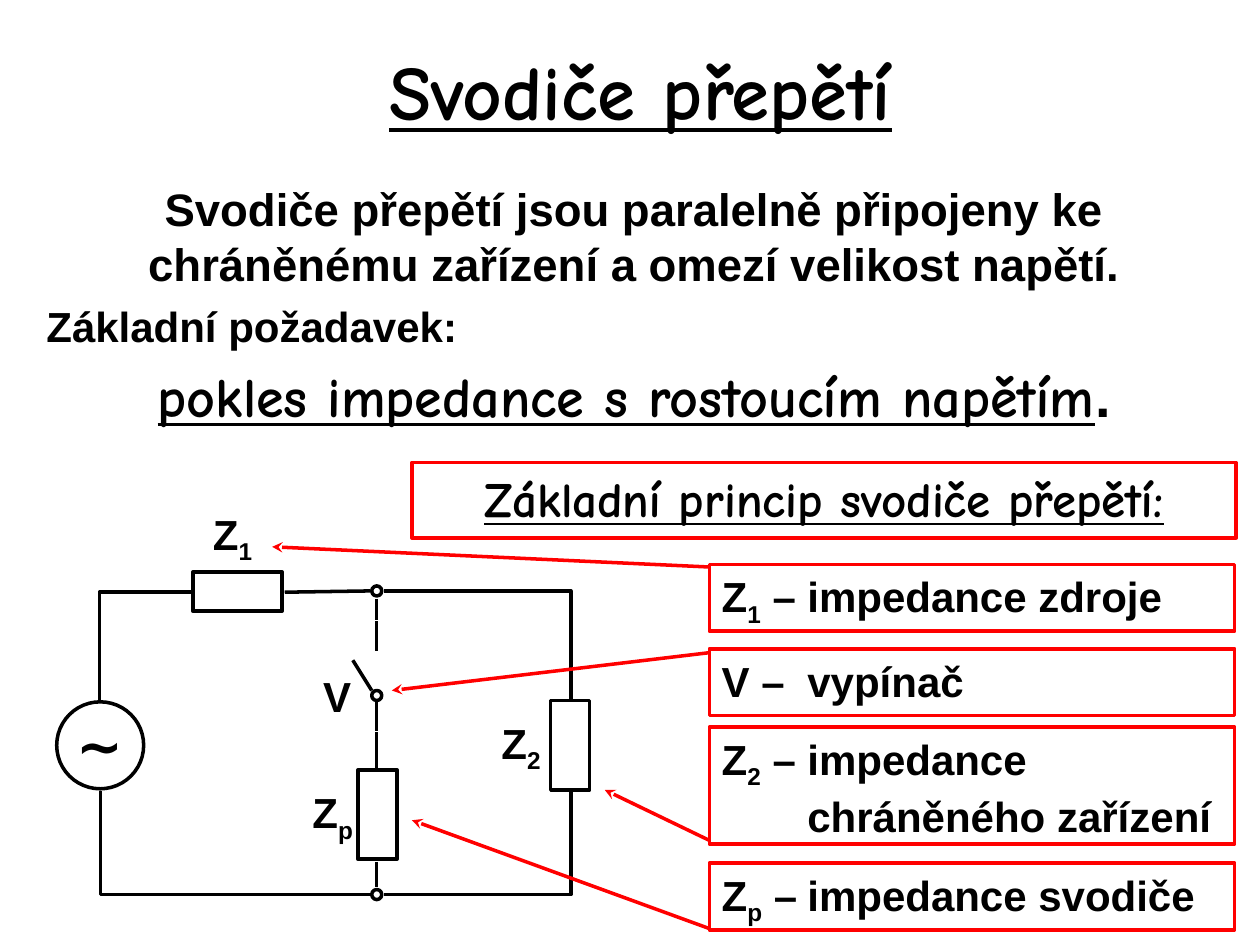
from dataclasses import dataclass

from lxml.etree import SubElement
from pptx import Presentation
from pptx.dml.color import RGBColor
from pptx.enum.shapes import MSO_CONNECTOR as Link, MSO_SHAPE as Kind
from pptx.enum.text import MSO_ANCHOR as Anchor, PP_ALIGN as Align
from pptx.oxml.ns import qn
from pptx.util import Inches, Pt

BLACK, RED = "000000", "FF0000"
COMIC = {"name": "Comic Neue", "underline": True}


@dataclass
class Run:
    text: str
    size: float = 24
    style: dict | None = None
    sub: bool = False


@dataclass
class Part:
    kind: Kind
    left: float
    top: float
    wide: float
    high: float
    turn: int = 0


@dataclass
class Tag:
    runs: list[Run]
    left: float
    top: float
    high: float = 0.4
    align: Align = Align.LEFT


@dataclass
class Note:
    runs: list[Run]
    top: float
    high: float
    start: float
    tip: tuple[float, float]


def paint(color, code: str) -> None:
    color.rgb = RGBColor.from_string(code)


def write(para, runs: list[Run], align: Align = Align.LEFT) -> None:
    para.alignment = align
    for item in runs:
        run = para.add_run()
        run.text = item.text
        look = {"name": "Arial", "size": Pt(item.size), "bold": True,
                "underline": False} | (item.style or {})
        for key, value in look.items():
            setattr(run.font, key, value)
        paint(run.font.color, BLACK)
        if item.sub:
            run.font._element.set("baseline", "-25000")


def symbol(foot: str) -> list[Run]:
    return [Run("Z"), Run(foot, sub=True)]


def draw(shapes, part: Part, code: str = BLACK):
    box = (part.left, part.top, part.wide, part.high)
    shape = shapes.add_shape(part.kind, *map(Inches, box))
    shape.rotation = part.turn
    shape.shadow.inherit = False
    shape.fill.background()
    paint(shape.line.color, code)
    shape.line.width = Pt(2)
    return shape


def wire(shapes, start: tuple, end: tuple, code: str = BLACK, bent: bool = False):
    """Draw a line; a bent one leaves its start horizontally."""
    kind = Link.ELBOW if bent else Link.STRAIGHT
    line = shapes.add_connector(kind, *map(Inches, start + end))
    paint(line.line.color, code)
    line.line.width = Pt(2)
    props = line._element.spPr
    if bent:
        props.find(qn("a:prstGeom")).set("prst", "bentConnector2")
    SubElement(props, qn("a:effectLst"))
    return line


def label(shapes, tag: Tag) -> None:
    box = shapes.add_textbox(*map(Inches, (tag.left, tag.top, 0.39, tag.high)))
    frame = box.text_frame
    look = {"word_wrap": True, "vertical_anchor": Anchor.MIDDLE, "margin_left": 0,
            "margin_right": 0, "margin_top": 0, "margin_bottom": 0}
    for key, value in look.items():
        setattr(frame, key, value)
    write(frame.paragraphs[0], tag.runs, tag.align)


def panel(shapes, part: Part, runs: list[Run], align: Align = Align.LEFT):
    frame = draw(shapes, part, RED).text_frame
    frame.word_wrap = True
    frame.vertical_anchor = Anchor.TOP
    write(frame.paragraphs[0], runs, align)
    return frame.paragraphs[0]


def explain(shapes, note: Note) -> None:
    """Add a legend box, with an arrow to the part that it names."""
    left = 5.63
    para = panel(shapes, Part(Kind.RECTANGLE, left, note.top, 4.17, note.high), note.runs)
    props = para._p.get_or_add_pPr()
    props.set("marL", str(Inches(0.68)))
    props.set("indent", str(Inches(-0.68)))
    arrow = wire(shapes, (left, note.start), note.tip, RED)
    SubElement(arrow.line._get_or_add_ln(), qn("a:tailEnd"), type="stealth")


PARTS = [
    Part(Kind.RECTANGLE, 1.53, 4.54, 0.71, 0.31),
    Part(Kind.RECTANGLE, 4.17, 5.76, 0.71, 0.31, 90),
    Part(Kind.RECTANGLE, 2.64, 6.31, 0.71, 0.31, 90),
    Part(Kind.OVAL, 0.45, 5.57, 0.69, 0.69),
    *(Part(Kind.OVAL, 2.95, top, 0.08, 0.08) for top in (4.65, 5.48, 7.06)),
]
BRANCH = [(4.75, 4.92), (4.93, 5.17), (5.56, 5.8), (5.81, 6.1), (6.84, 7.04)]
CORNERS = [
    ((1.52, 4.7), (0.79, 5.56)),
    ((2.94, 7.1), (0.8, 6.28)),
    ((3.05, 4.69), (4.53, 5.55)),
    ((3.05, 7.1), (4.53, 6.28)),
]
TAGS = [
    Tag([Run("∼", 32)], 0.6, 5.64, 0.53, Align.CENTER),
    Tag([Run("V")], 2.48, 5.32, align=Align.CENTER),
    Tag(symbol("2"), 3.98, 5.72),
    Tag(symbol("1"), 1.69, 4.06),
    Tag(symbol("p"), 2.48, 6.27),
]
NOTES = [
    Note(symbol("1") + [Run(" –\timpedance zdroje")], 4.48, 0.53, 4.5, (2.16, 4.34)),
    Note([Run("V –\tvypínač")], 5.15, 0.53, 5.18, (3.11, 5.48)),
    Note(symbol("2") + [Run(" –\timpedance chráněného zařízení")],
         5.77, 0.93, 6.67, (4.8, 6.27)),
    Note(symbol("p") + [Run(" –\timpedance svodiče")], 6.85, 0.53, 7.37, (3.27, 6.51)),
]
INTRO = [
    (Run("Svodiče přepětí jsou paralelně připojeny ke chráněnému zařízení "
         "a omezí velikost napětí.", 26),),
    (Run("Základní požadavek:"),),
    (Run("pokles impedance s rostoucím napětím", 32, COMIC), Run(".", 32)),
]


def main() -> None:
    deck = Presentation()
    deck.slide_width, deck.slide_height = Inches(10), Inches(7.5)
    slide = deck.slides.add_slide(deck.slide_layouts[5])
    shapes = slide.shapes

    title = shapes.title
    place = {"left": 0.5, "top": 0.27, "width": 9.17, "height": 0.88}
    for key, value in place.items():
        setattr(title, key, Inches(value))
    title.text_frame.vertical_anchor = Anchor.MIDDLE
    write(title.text_frame.paragraphs[0], [Run("Svodiče přepětí", 44, COMIC)], Align.CENTER)

    frame = shapes.add_textbox(*map(Inches, (0.27, 1.39, 9.53, 2))).text_frame
    frame.word_wrap = True
    for index, runs in enumerate(INTRO):
        para = frame.add_paragraph() if index else frame.paragraphs[0]
        para.space_before = Pt(6 if index else 0)
        write(para, runs, Align.LEFT if index == 1 else Align.CENTER)

    panel(shapes, Part(Kind.RECTANGLE, 3.27, 3.67, 6.54, 0.6),
          [Run("Základní princip svodiče přepětí:", 28, COMIC)], Align.CENTER)

    circuit = shapes.add_group_shape().shapes
    for part in PARTS:
        draw(circuit, part)
    for top, end in BRANCH:
        wire(circuit, (2.99, top), (2.99, end))
    wire(circuit, (2.8, 5.24), (2.95, 5.48))
    wire(circuit, (2.26, 4.7), (2.94, 4.69))
    for start, end in CORNERS:
        wire(circuit, start, end, bent=True)
    for tag in TAGS:
        label(circuit, tag)

    for note in NOTES:
        explain(shapes, note)
    deck.save("out.pptx")


if __name__ == "__main__":
    main()
